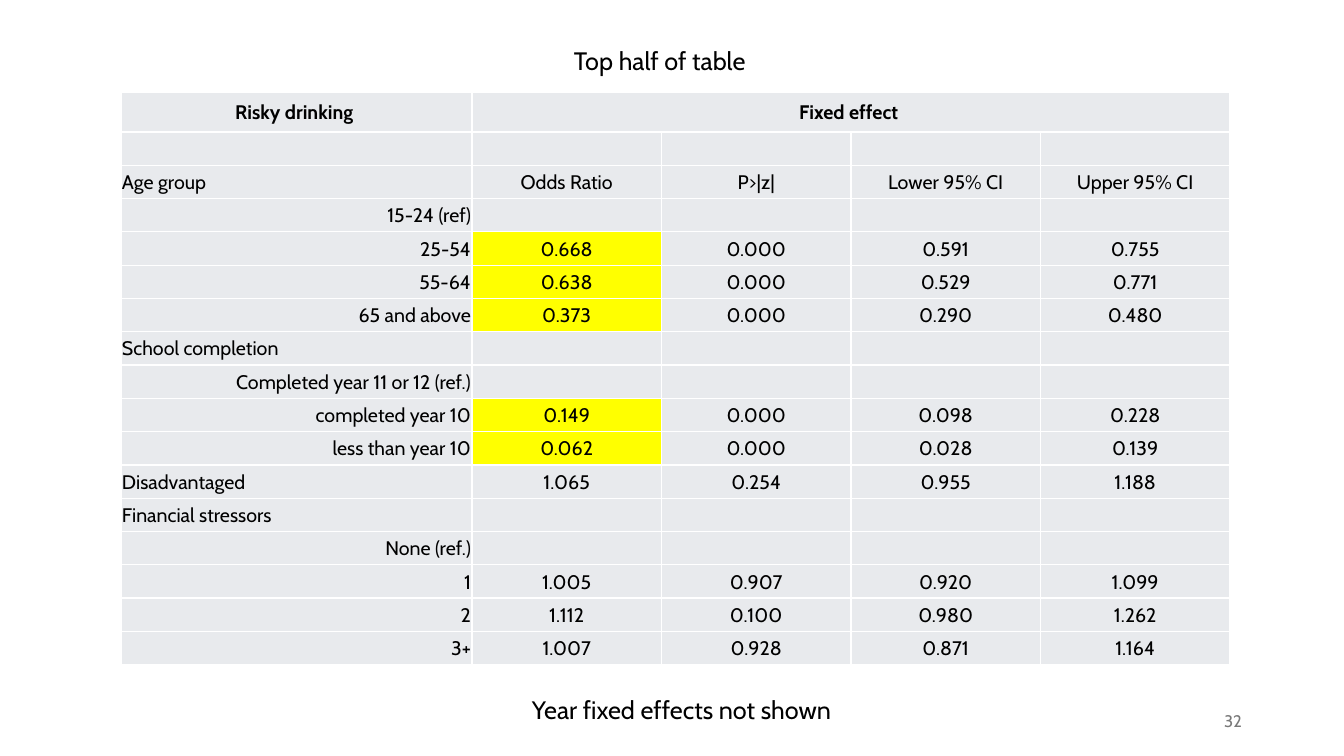
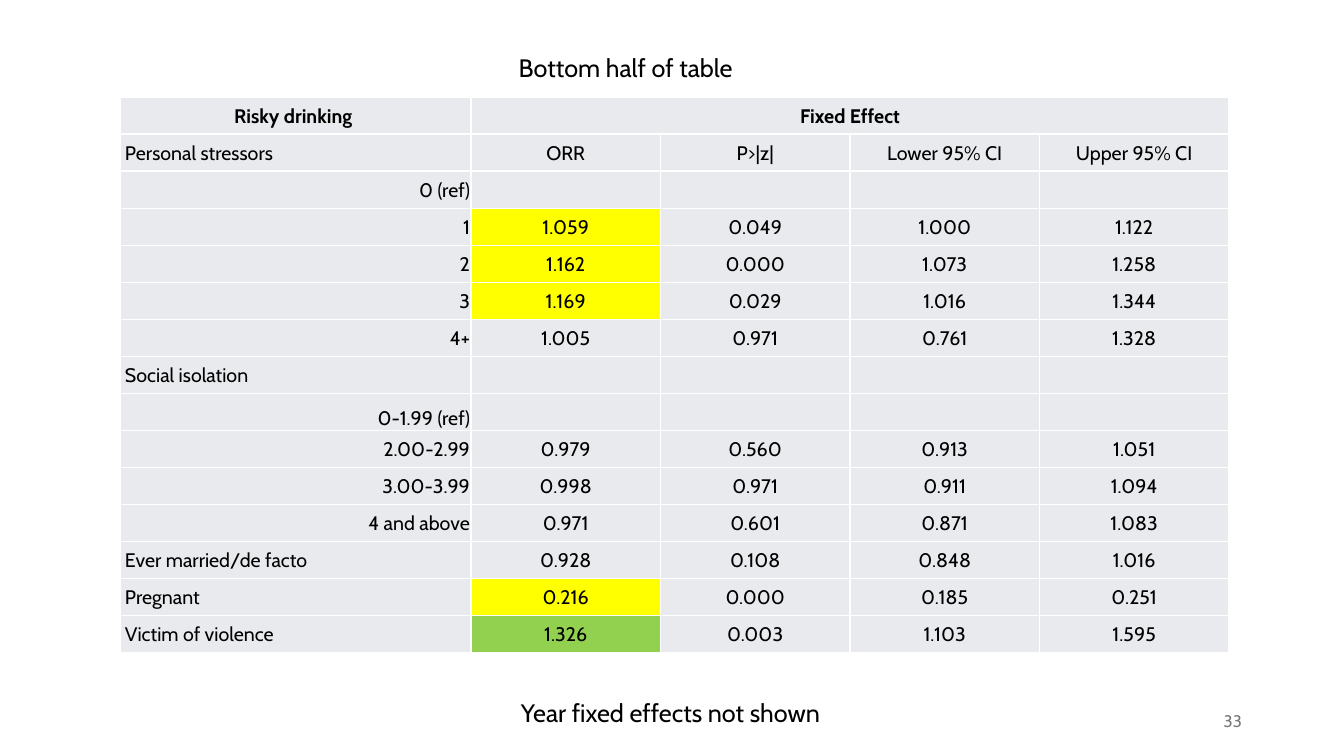
from lxml.etree import SubElement
from pptx import Presentation
from pptx.dml.color import RGBColor
from pptx.enum.text import MSO_ANCHOR as Anchor, MSO_AUTO_SIZE as AutoSize, PP_ALIGN as Align
from pptx.oxml.ns import qn
from pptx.util import Emu, Pt

EMU_PER_PX = 914400 / 100.8
FONT = "Cabin"
BLACK = RGBColor(0x00, 0x00, 0x00)
WHITE = RGBColor(0xFF, 0xFF, 0xFF)
GREY = RGBColor(0x79, 0x79, 0x79)
CELL_GREY = RGBColor(0xE8, 0xEA, 0xED)
YELLOW = RGBColor(0xFF, 0xFF, 0x00)
GREEN = RGBColor(0x92, 0xD0, 0x50)

LABEL_WIDTH = 351
VALUES_WIDTH = 758
VALUE_COLUMNS = 4
CELL_SIZE = 14
GROUP, LEVEL = Align.LEFT, Align.RIGHT
INTERVAL_HEADS = "P>|z|", "Lower 95% CI", "Upper 95% CI"
EMPTY = ("",) * VALUE_COLUMNS

TOP_ROWS = [
    (GROUP, "", EMPTY),
    (GROUP, "Age group", ("Odds Ratio", *INTERVAL_HEADS)),
    (LEVEL, "15-24 (ref)", EMPTY),
    (LEVEL, "25-54", ("0.668", "0.000", "0.591", "0.755")),
    (LEVEL, "55-64", ("0.638", "0.000", "0.529", "0.771")),
    (LEVEL, "65 and above", ("0.373", "0.000", "0.290", "0.480")),
    (GROUP, "School completion", EMPTY),
    (LEVEL, "Completed year 11 or 12 (ref.)", EMPTY),
    (LEVEL, "completed year 10", ("0.149", "0.000", "0.098", "0.228")),
    (LEVEL, "less than year 10", ("0.062", "0.000", "0.028", "0.139")),
    (GROUP, "Disadvantaged", ("1.065", "0.254", "0.955", "1.188")),
    (GROUP, "Financial stressors", EMPTY),
    (LEVEL, "None (ref.)", EMPTY),
    (LEVEL, "1", ("1.005", "0.907", "0.920", "1.099")),
    (LEVEL, "2", ("1.112", "0.100", "0.980", "1.262")),
    (LEVEL, "3+", ("1.007", "0.928", "0.871", "1.164")),
]
TOP_HIGHLIGHTS = {
    "25-54": YELLOW, "55-64": YELLOW, "65 and above": YELLOW,
    "completed year 10": YELLOW, "less than year 10": YELLOW,
}

BOTTOM_ROWS = [
    (GROUP, "Personal stressors", ("ORR", *INTERVAL_HEADS)),
    (LEVEL, "0 (ref)", EMPTY),
    (LEVEL, "1", ("1.059", "0.049", "1.000", "1.122")),
    (LEVEL, "2", ("1.162", "0.000", "1.073", "1.258")),
    (LEVEL, "3", ("1.169", "0.029", "1.016", "1.344")),
    (LEVEL, "4+", ("1.005", "0.971", "0.761", "1.328")),
    (GROUP, "Social isolation", EMPTY),
    (LEVEL, "0-1.99 (ref)", EMPTY),
    (LEVEL, "2.00-2.99", ("0.979", "0.560", "0.913", "1.051")),
    (LEVEL, "3.00-3.99", ("0.998", "0.971", "0.911", "1.094")),
    (LEVEL, "4 and above", ("0.971", "0.601", "0.871", "1.083")),
    (GROUP, "Ever married/de facto", ("0.928", "0.108", "0.848", "1.016")),
    (GROUP, "Pregnant", ("0.216", "0.000", "0.185", "0.251")),
    (GROUP, "Victim of violence", ("1.326", "0.003", "1.103", "1.595")),
]
BOTTOM_HIGHLIGHTS = {
    "1": YELLOW, "2": YELLOW, "3": YELLOW,
    "Pregnant": YELLOW, "Victim of violence": GREEN,
}


def px(length):
    return Emu(round(length * EMU_PER_PX))


def style_paragraph(paragraph, text, size, align, color=BLACK, bold=False):
    paragraph.text = text
    paragraph.alignment = align
    font = paragraph.font
    font.name, font.size, font.bold = FONT, Pt(size), bold
    font.color.rgb = color
    if not text:
        SubElement(paragraph._p, qn("a:endParaRPr"), sz=str(size * 100))


def add_text(slide, text, left, top, width, size=18, align=Align.CENTER, color=BLACK):
    frame = slide.shapes.add_textbox(px(left), px(top), px(width), px(40)).text_frame
    frame.word_wrap = True
    style_paragraph(frame.paragraphs[0], text, size, align, color)
    return frame


def add_caption(slide, text, left, top, width):
    add_text(slide, text, left, top, width).auto_size = AutoSize.SHAPE_TO_FIT_TEXT


def add_page_number(slide, number):
    frame = add_text(slide, str(number), 950, 701, 302, 12, Align.RIGHT, GREY)
    frame.vertical_anchor = Anchor.MIDDLE


def add_borders(cell):
    properties = cell._tc.get_or_add_tcPr()
    for position, side in enumerate(("a:lnL", "a:lnR", "a:lnT", "a:lnB")):
        line = properties.makeelement(qn(side), {"w": str(Pt(1))})
        fill = SubElement(line, qn("a:solidFill"))
        SubElement(fill, qn("a:srgbClr"), val=str(WHITE))
        properties.insert(position, line)


def fill_cell(cell, text, align=Align.CENTER, fill=CELL_GREY, bold=False, indent=1):
    cell.margin_left, cell.margin_right = px(indent), px(1)
    cell.margin_top, cell.margin_bottom = px(1), px(0)
    cell.vertical_anchor = Anchor.MIDDLE
    cell.fill.solid()
    cell.fill.fore_color.rgb = fill
    add_borders(cell)
    style_paragraph(cell.text_frame.paragraphs[0], text, CELL_SIZE, align, bold=bold)


def add_effects_table(slide, left, top, header_height, body_height, heading, rows,
                      highlights, group_indent=1):
    shape = slide.shapes.add_table(
        len(rows) + 1, VALUE_COLUMNS + 1, px(left), px(top),
        px(LABEL_WIDTH + VALUES_WIDTH), px(header_height + body_height))
    table = shape.table
    table.first_row = table.horz_banding = False
    for index, column in enumerate(table.columns):
        column.width = px(VALUES_WIDTH / VALUE_COLUMNS if index else LABEL_WIDTH)
    for index, row in enumerate(table.rows):
        row.height = px(body_height / len(rows) if index else header_height)

    for column, text in enumerate(("Risky drinking ", heading, *EMPTY[1:])):
        fill_cell(table.cell(0, column), text, bold=True)
    table.cell(0, 1).merge(table.cell(0, VALUE_COLUMNS))

    for index, (align, label, values) in enumerate(rows, 1):
        indent = group_indent if align == GROUP else 1
        fill_cell(table.cell(index, 0), label, align, indent=indent)
        for column, value in enumerate(values, 1):
            fill = highlights.get(label, CELL_GREY) if column == 1 else CELL_GREY
            fill_cell(table.cell(index, column), value, fill=fill)
    return table


def add_table_slide(presentation, number, title, title_at, note_at):
    slide = presentation.slides.add_slide(presentation.slide_layouts[6])
    add_caption(slide, "Year fixed effects not shown", *note_at, 1013)
    add_page_number(slide, number)
    add_caption(slide, title, *title_at, 337)
    return slide


def main():
    presentation = Presentation()
    presentation.slide_width, presentation.slide_height = px(1344), px(756)

    slide = add_table_slide(presentation, 32, "Top half of table ", (494, 40), (175, 689))
    add_effects_table(slide, 121, 92, 40, 533, "Fixed effect ", TOP_ROWS, TOP_HIGHLIGHTS)

    slide = add_table_slide(presentation, 33, "Bottom half of table ", (460, 47), (164, 692))
    table = add_effects_table(slide, 120, 97, 37, 519, "Fixed Effect", BOTTOM_ROWS,
                              BOTTOM_HIGHLIGHTS, group_indent=5)
    table.cell(8, 0).vertical_anchor = Anchor.BOTTOM

    presentation.save("out.pptx")


if __name__ == "__main__":
    main()
